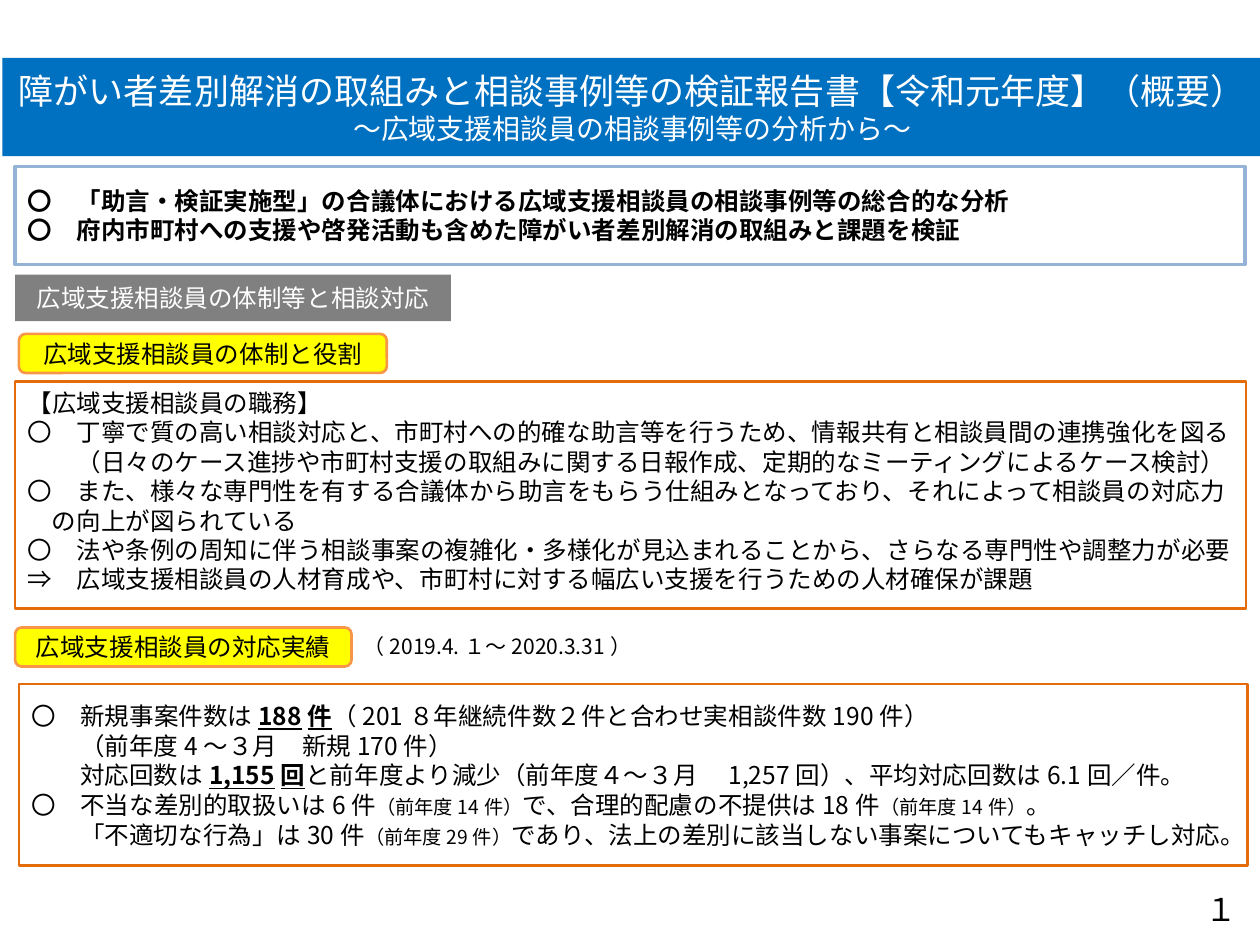
from dataclasses import dataclass
from typing import Optional

from lxml.etree import SubElement
from pptx import Presentation
from pptx.dml.color import RGBColor
from pptx.enum.shapes import MSO_SHAPE
from pptx.enum.text import MSO_ANCHOR, PP_ALIGN
from pptx.oxml.ns import qn
from pptx.util import Inches, Pt

FONT = "Noto Sans CJK JP"
BLACK, WHITE = "000000", "FFFFFF"
ORANGE, YELLOW, LABEL_LINE = "E46C0A", "FFFF00", "F79646"
LINE_FACTOR = 1.2
STRONG = {"bold": True, "underline": True}
SMALL = {"size": Pt(11)}


@dataclass
class Line:
    """One paragraph; each span is plain text or a (text, format) pair."""
    spans: list
    indent: int = 0  # in full-width characters
    size: float = 14


@dataclass
class Box:
    place: tuple
    lines: list
    fill: Optional[str] = WHITE
    line: Optional[str] = None
    line_width: float = 1.5
    color: str = BLACK
    centred: bool = False
    rounded: bool = False
    anchor: MSO_ANCHOR = MSO_ANCHOR.MIDDLE
    bold: bool = False
    font: str = FONT
    spacing: Optional[float] = None


def rgb(value: str) -> RGBColor:
    return RGBColor.from_string(value)


def add_span(para, text: str, values: dict) -> None:
    """Add a run whose Latin and East Asian typefaces are the same."""
    span = para.add_run()
    span.text = text
    color = values.pop("color")
    for name, value in values.items():
        setattr(span.font, name, value)
    span.font.color.rgb = rgb(color)
    SubElement(span._r.get_or_add_rPr(), qn("a:ea"), typeface=values["name"])


def write_lines(frame, box: Box) -> None:
    frame.word_wrap = True
    frame.vertical_anchor = box.anchor
    for index, line in enumerate(box.lines):
        para = frame.add_paragraph() if index else frame.paragraphs[0]
        para.alignment = PP_ALIGN.CENTER if box.centred else PP_ALIGN.LEFT
        para.line_spacing = Pt(box.spacing or line.size * LINE_FACTOR)
        if line.indent:
            para._p.get_or_add_pPr().set("marL", str(Pt(line.indent * line.size)))
        for span in line.spans:
            text, extra = (span, {}) if isinstance(span, str) else span
            base = {"name": box.font, "size": Pt(line.size),
                    "bold": box.bold, "color": box.color}
            add_span(para, text, {**base, **extra})


def add_box(page, box: Box) -> None:
    place = [Inches(length) for length in box.place]
    if box.fill is None:
        shape = page.shapes.add_textbox(*place)
    else:
        preset = MSO_SHAPE.ROUNDED_RECTANGLE if box.rounded else MSO_SHAPE.RECTANGLE
        shape = page.shapes.add_shape(preset, *place)
        shape.shadow.inherit = False
        shape.fill.solid()
        shape.fill.fore_color.rgb = rgb(box.fill)
        if box.line:
            shape.line.color.rgb = rgb(box.line)
            shape.line.width = Pt(box.line_width)
        else:
            shape.line.fill.background()
    write_lines(shape.text_frame, box)


def label(place: tuple, text: str) -> Box:
    return Box(place, [Line([text])], YELLOW, LABEL_LINE, centred=True, rounded=True)


RESULTS = [
    Line(["〇　新規事案件数は", ("188件", STRONG),
          "（201８年継続件数２件と合わせ実相談件数190件）"]),
    Line(["（前年度4～３月　新規170件）"], indent=2),
    Line(["対応回数は", ("1,155回", STRONG),
          "と前年度より減少（前年度４～３月　1,257回）、平均対応回数は6.1回／件。"], indent=2),
    Line(["〇　不当な差別的取扱いは6件", ("（前年度14件）", SMALL),
          "で、合理的配慮の不提供は18件", ("（前年度14件）", SMALL), "。"]),
    Line(["「不適切な行為」は30件", ("（前年度29件）", SMALL),
          "であり、法上の差別に該当しない事案についてもキャッチし対応。"], indent=2),
]

DUTIES = [
    Line(["【広域支援相談員の職務】"]),
    Line(["〇　丁寧で質の高い相談対応と、市町村への的確な助言等を行うため、情報共有と相談員間の連携強化を図る"]),
    Line(["（日々のケース進捗や市町村支援の取組みに関する日報作成、定期的なミーティングによるケース検討）"], indent=2),
    Line(["〇　また、様々な専門性を有する合議体から助言をもらう仕組みとなっており、それによって相談員の対応力"]),
    Line(["の向上が図られている"], indent=1),
    Line(["〇　法や条例の周知に伴う相談事案の複雑化・多様化が見込まれることから、さらなる専門性や調整力が必要"]),
    Line(["⇒　広域支援相談員の人材育成や、市町村に対する幅広い支援を行うための人材確保が課題"]),
]

TITLE = [
    Line(["障がい者差別解消の取組みと相談事例等の検証報告書【令和元年度】（概要）"], size=20),
    Line(["～広域支援相談員の相談事例等の分析から～"], size=16),
]

SUMMARY = [
    Line(["〇　「助言・検証実施型」の合議体における広域支援相談員の相談事例等の総合的な分析"]),
    Line(["〇　府内市町村への支援や啓発活動も含めた障がい者差別解消の取組みと課題を検証"]),
]

BOXES = [
    Box((0.15, 5.43, 9.75, 1.44), RESULTS, line=ORANGE, spacing=17),
    Box((0.12, 3.03, 9.77, 1.8), DUTIES, line=ORANGE, anchor=MSO_ANCHOR.TOP),
    Box((0.12, 2.18, 3.46, 0.37), [Line(["広域支援相談員の体制等と相談対応"])],
        "808080", color=WHITE, centred=True),
    label((0.12, 4.98, 2.67, 0.31), "広域支援相談員の対応実績"),
    label((0.15, 2.65, 2.92, 0.31), "広域支援相談員の体制と役割"),
    Box((2.79, 4.98, 6.2, 0.3), [Line(["（2019.4.１～2020.3.31）"], size=12)],
        fill=None, anchor=MSO_ANCHOR.TOP),
    Box((0.02, 0.46, 10, 0.78), TITLE, "0070C0", color=WHITE, centred=True),
    Box((0.12, 1.32, 9.76, 0.78), SUMMARY, line="95B3D7", line_width=2, bold=True),
    Box((9.46, 7, 0.47, 0.42), [Line(["１"], size=18)], centred=True, font="Calibri"),
]


def main() -> None:
    deck = Presentation()
    deck.slide_width, deck.slide_height = Inches(10), Inches(7.5)
    page = deck.slides.add_slide(deck.slide_layouts[6])
    for box in BOXES:
        add_box(page, box)
    deck.save("out.pptx")


if __name__ == "__main__":
    main()
